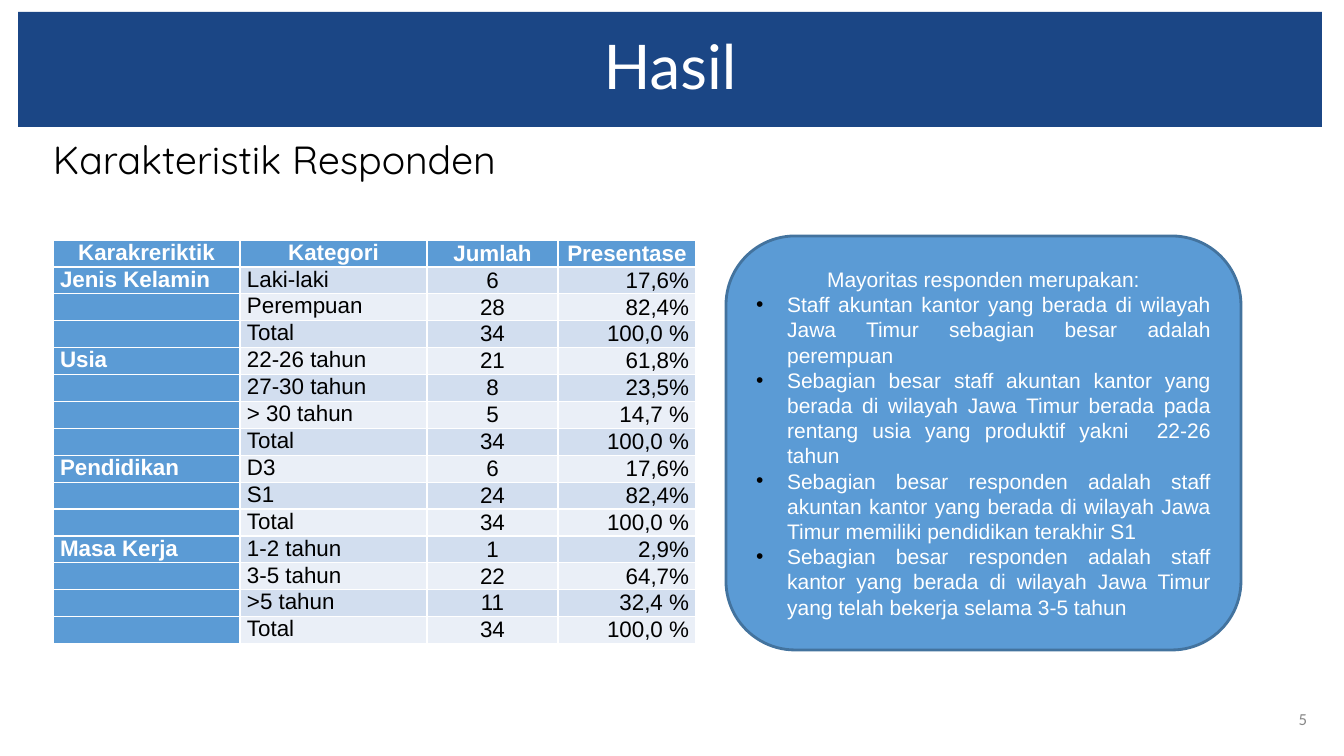
"""Build the respondent characteristics slide with its table and summary panel."""
from lxml.etree import SubElement
from pptx import Presentation
from pptx.dml.color import RGBColor
from pptx.enum.shapes import MSO_SHAPE as Shape
from pptx.enum.text import MSO_ANCHOR as Anchor, PP_ALIGN as Align
from pptx.oxml.ns import qn
from pptx.util import Emu, Pt

NAVY = RGBColor(0x1B, 0x46, 0x85)
BLUE = RGBColor(0x5B, 0x9B, 0xD5)
EDGE = RGBColor(0x43, 0x73, 0x9E)
BAND_DARK = RGBColor(0xD2, 0xDE, 0xEF)
BAND_LIGHT = RGBColor(0xEA, 0xEF, 0xF7)
WHITE = RGBColor(0xFF, 0xFF, 0xFF)
BLACK = RGBColor(0, 0, 0)
GRAY = RGBColor(0x88, 0x88, 0x88)


def px(count):
    return Emu(round(count * 914400 / 100.8))


def write(paragraph, text, font, size, color, align, bold=False):
    paragraph.alignment = align
    run = paragraph.add_run()
    run.text = text
    run.font.name = font
    run.font.size = Pt(size)
    run.font.bold = bold
    run.font.color.rgb = color


deck = Presentation()
deck.slide_width, deck.slide_height = px(1344), px(756)
slide = deck.slides.add_slide(deck.slide_layouts[6])
shapes = slide.shapes

page_number = shapes.add_textbox(px(1260), px(699), px(57), px(40)).text_frame
page_number.word_wrap = True
page_number.vertical_anchor = Anchor.MIDDLE
write(page_number.paragraphs[0], "5", "Calibri", 12, GRAY, Align.RIGHT)

banner = shapes.add_shape(Shape.RECTANGLE, px(18), px(12), px(1304), px(115))
banner.shadow.inherit = False
banner.fill.solid()
banner.fill.fore_color.rgb = NAVY
banner.line.fill.background()
banner.text_frame.vertical_anchor = Anchor.MIDDLE
title = banner.text_frame.paragraphs[0]
title.line_spacing = 0.9
write(title, "Hasil", "Lato", 44, WHITE, Align.CENTER)

body = shapes.add_textbox(px(18), px(136), px(1304), px(561)).text_frame
body.word_wrap = True
subtitle = body.paragraphs[0]
subtitle.line_spacing = 0.9
subtitle_format = subtitle._p.get_or_add_pPr()
subtitle_format.set("marL", str(px(50)))
subtitle_format.set("indent", str(px(-25)))
write(subtitle, "Karakteristik Responden", "Quicksand", 28, BLACK, Align.LEFT)

headings = ("Karakreriktik", "Kategori", "Jumlah", "Presentase")
groups = {
    "Jenis Kelamin": [("Laki-laki", "6", "17,6%"), ("Perempuan", "28", "82,4%")],
    "Usia": [("22-26 tahun", "21", "61,8%"), ("27-30 tahun", "8", "23,5%"),
             ("> 30 tahun", "5", "14,7 %")],
    "Pendidikan": [("D3", "6", "17,6%"), ("S1", "24", "82,4%")],
    "Masa Kerja": [("1-2 tahun", "1", "2,9%"), ("3-5 tahun", "22", "64,7%"),
                   (">5 tahun", "11", "32,4 %")],
}
rows = [headings]
for group, categories in groups.items():
    for index, category in enumerate(categories + [("Total", "34", "100,0 %")]):
        rows.append(("" if index else group, *category))

widths = (187, 187, 131, 138)
aligns = (Align.JUSTIFY, Align.JUSTIFY, Align.CENTER, Align.RIGHT)
respondents = shapes.add_table(
    len(rows), len(widths), px(53), px(240), px(sum(widths)), px(25 * len(rows))).table
respondents.first_col = True
for column, width in zip(respondents.columns, widths):
    column.width = px(width)
for r, values in enumerate(rows):
    respondents.rows[r].height = px(25)
    for c, value in enumerate(values):
        cell = respondents.cell(r, c)
        cell.margin_left = cell.margin_right = px(7)
        cell.margin_top = cell.margin_bottom = 0
        cell.vertical_anchor = Anchor.MIDDLE if c > 1 else Anchor.TOP
        heading = r == 0 or c == 0
        cell.fill.solid()
        cell.fill.fore_color.rgb = BLUE if heading else BAND_DARK if r % 2 else BAND_LIGHT
        entry = cell.text_frame.paragraphs[0]
        if value:
            write(entry, value, "Arial", 16, WHITE if heading else BLACK,
                  aligns[c] if r else Align.CENTER, heading)
        else:
            SubElement(entry._p, qn("a:endParaRPr"), sz="1600")

panel = shapes.add_shape(Shape.ROUNDED_RECTANGLE, px(726), px(236), px(515), px(414))
panel.shadow.inherit = False
panel.fill.solid()
panel.fill.fore_color.rgb = BLUE
panel.line.color.rgb = EDGE
panel.line.width = Pt(2)
summary = panel.text_frame
summary.word_wrap = True
summary.vertical_anchor = Anchor.MIDDLE
write(summary.paragraphs[0], "Mayoritas responden merupakan:", "Arial", 15, WHITE, Align.CENTER)
findings = (
    "Staff akuntan kantor yang berada di wilayah Jawa Timur sebagian besar adalah perempuan",
    "Sebagian besar staff akuntan kantor yang berada di wilayah Jawa Timur berada pada "
    "rentang usia yang produktif yakni  22-26 tahun",
    "Sebagian besar responden adalah staff akuntan kantor yang berada di wilayah "
    "Jawa Timur memiliki pendidikan terakhir S1",
    "Sebagian besar responden adalah staff kantor yang berada di wilayah Jawa Timur "
    "yang telah bekerja selama 3-5 tahun",
)
for finding in findings:
    point = summary.add_paragraph()
    point_format = point._p.get_or_add_pPr()
    point_format.set("marL", str(px(31)))
    point_format.set("indent", str(px(-31)))
    bullet_color = SubElement(point_format, qn("a:buClr"))
    SubElement(bullet_color, qn("a:srgbClr"), val=str(BLACK))
    SubElement(point_format, qn("a:buFont"), typeface="Arial")
    SubElement(point_format, qn("a:buChar"), char="•")
    write(point, finding, "Arial", 15, WHITE, Align.JUSTIFY)

deck.save("out.pptx")
